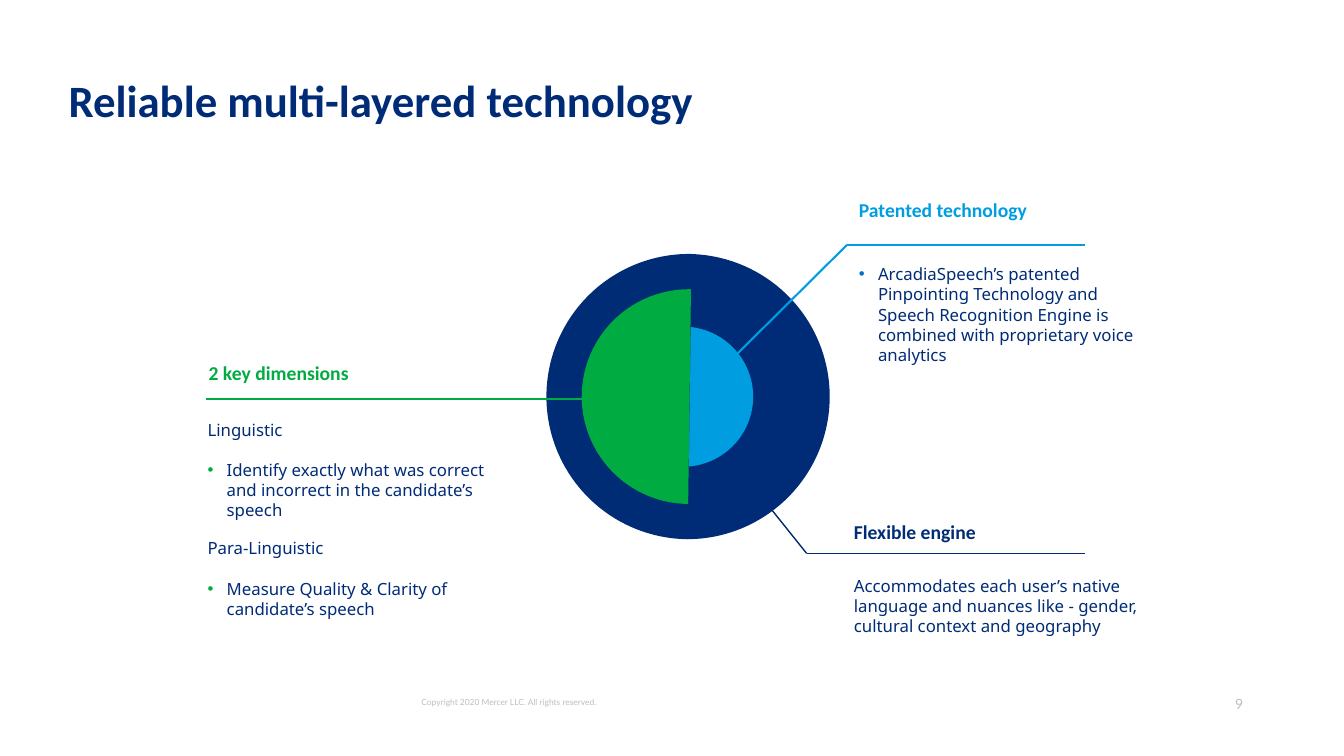
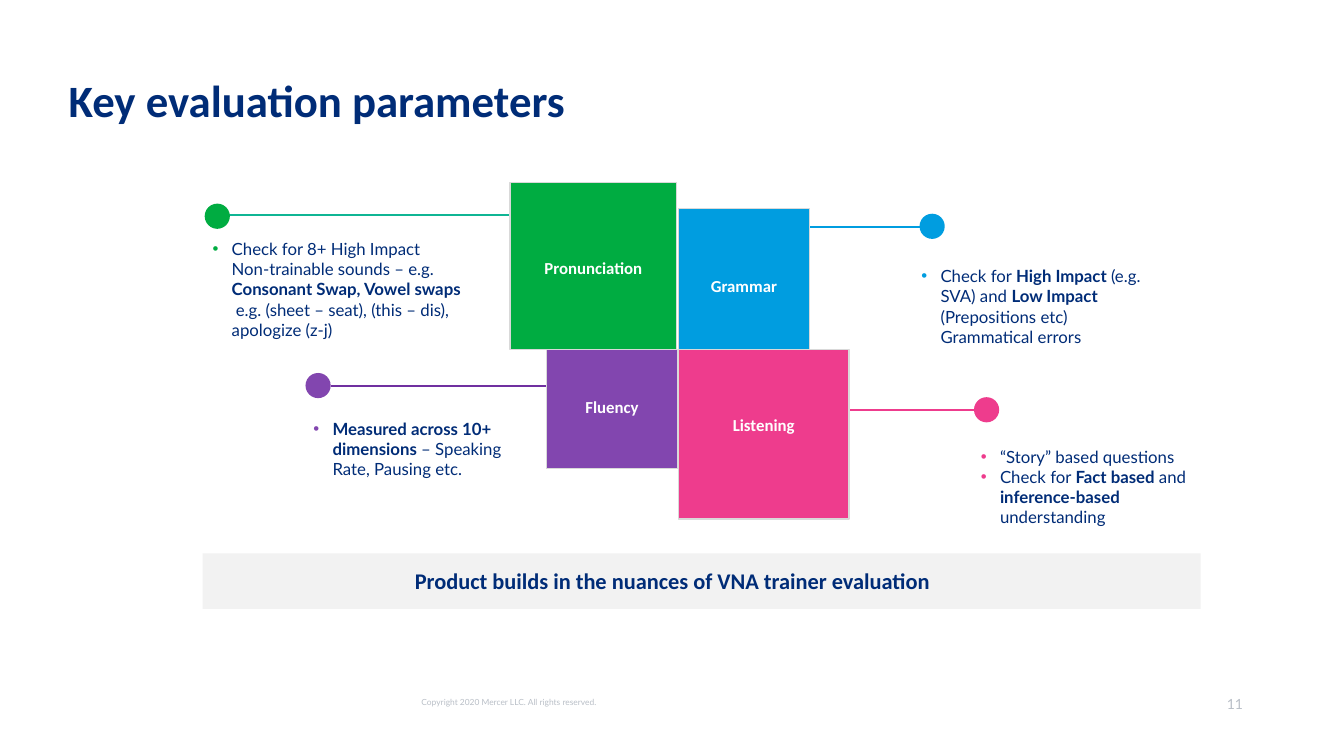
from collections import namedtuple
from dataclasses import dataclass

from lxml.etree import SubElement
from pptx import Presentation
from pptx.dml.color import RGBColor
from pptx.enum.shapes import MSO_CONNECTOR as Link, MSO_SHAPE as Shape
from pptx.enum.text import MSO_ANCHOR as Anchor, MSO_AUTO_SIZE as Fit, PP_ALIGN as Align
from pptx.oxml.ns import qn
from pptx.util import Emu, Pt

PX = 9144  # EMU per px, 100 px to the inch


@dataclass(frozen=True)
class Theme:
    navy: str = "002C77"
    disc: str = "002C75"
    green: str = "00AC41"
    teal: str = "0FB594"
    sky: str = "009DE0"
    blue: str = "0071CB"
    pink: str = "EE3C8D"
    purple: str = "8246AF"
    violet: str = "7030A0"
    band: str = "F2F2F2"
    edge: str = "D9D9D9"
    muted: str = "B9BFC7"
    white: str = "FFFFFF"
    head_font: str = "Calibri"
    body_font: str = "Lato"
    prose_font: str = "Noto Sans"
    title: int = 32
    banner: int = 16
    heading: int = 14
    body: int = 12
    page: int = 10
    footer: int = 6
    title_pitch: float = 36
    body_pitch: float = 14.4


T = Theme()
Style = namedtuple("Style", "font size color bold align pitch", defaults=(False, Align.LEFT, None))
TITLE = Style(T.head_font, T.title, T.navy, True, pitch=Pt(T.title_pitch))
BANNER = Style(T.head_font, T.banner, T.navy, True, Align.CENTER)
LABEL = Style(T.head_font, T.body, T.white, True, Align.CENTER)
PROSE = Style(T.prose_font, T.body, T.navy, pitch=Pt(T.body_pitch))
BODY = PROSE._replace(font=T.body_font)
PAGE = Style(T.body_font, T.page, T.muted, align=Align.RIGHT)
FOOTER = Style(T.body_font, T.footer, T.muted, pitch=0.9)


def heading_style(color):
    return Style(T.head_font, T.heading, color, True)


class Deck:
    """Holds the presentation and the slide being drawn."""

    def __init__(self, width, height):
        self.prs = Presentation()
        self.prs.slide_width, self.prs.slide_height = Emu(width * PX), Emu(height * PX)
        self.slide = None

    def new_slide(self, title, number):
        self.slide = self.prs.slides.add_slide(self.prs.slide_layouts[5])
        holder = self.slide.shapes.title
        holder.left, holder.top, holder.width, holder.height = self.emu(68, 75, 861, 106)
        self.fill_text(holder.text_frame, [title], TITLE, inset=False)
        self.text((1197, 690, 36, 17), [number], PAGE, inset=False)
        self.text((418, 693, 188, 14), ["Copyright 2020 Mercer LLC. All rights reserved."],
                  FOOTER, inset=False)

    @staticmethod
    def emu(*lengths):
        return [Emu(n * PX) for n in lengths]

    def shape(self, kind, box, fill, edge=None, angles=None):
        item = self.slide.shapes.add_shape(kind, *self.emu(*box))
        item.shadow.inherit = False
        item.fill.solid()
        item.fill.fore_color.rgb = RGBColor.from_string(fill)
        if edge:
            item.line.color.rgb = RGBColor.from_string(edge)
            item.line.width = Pt(1)
        else:
            item.line.fill.background()
        for i, degrees in enumerate(angles or ()):
            item.adjustments[i] = degrees * 0.6  # 60000ths of a degree over 100000

    def line(self, start, end, color, weight=1.5):
        item = self.slide.shapes.add_connector(Link.STRAIGHT, *self.emu(*start, *end))
        item.line.color.rgb = RGBColor.from_string(color)
        item.line.width = Pt(weight)
        SubElement(item._element.spPr, qn("a:effectLst"))

    def text(self, box, paragraphs, style, bullet=None, inset=True, plain=0, gap=0):
        frame = self.slide.shapes.add_textbox(*self.emu(*box)).text_frame
        self.fill_text(frame, paragraphs, style, bullet, inset, plain, gap)

    def fill_text(self, frame, paragraphs, style, bullet=None, inset=True, plain=0, gap=0):
        """A paragraph is a string, with ** around its bold parts.

        The first `plain` paragraphs get no bullet; `gap` is the space between paragraphs.
        """
        frame.word_wrap, frame.auto_size = True, Fit.NONE
        frame.vertical_anchor = Anchor.TOP
        frame.margin_left = frame.margin_right = Emu(10 * PX * inset)
        frame.margin_top = frame.margin_bottom = Emu(5 * PX * inset)
        for i, content in enumerate(paragraphs):
            par = frame.paragraphs[0] if i == 0 else frame.add_paragraph()
            if bullet and i >= plain:
                self.add_bullet(par, bullet)
            par.alignment = style.align
            if style.pitch:
                par.line_spacing = style.pitch
            if i and gap:
                par.space_before = Pt(gap)
            for j, part in enumerate(content.split("**")):
                self.add_runs(par, part, style, style.bold or j % 2 == 1)

    @staticmethod
    def add_bullet(par, color):
        props = par._p.get_or_add_pPr()
        props.set("marL", str(19 * PX))
        props.set("indent", str(-19 * PX))
        SubElement(SubElement(props, qn("a:buClr")), qn("a:srgbClr"), val=color)
        SubElement(props, qn("a:buFont"), typeface="Arial")
        SubElement(props, qn("a:buChar"), char="•")

    @staticmethod
    def add_runs(par, content, style, bold):
        for i, piece in enumerate(content.split("\n")):
            if i:
                par.add_line_break()
            if piece:
                run = par.add_run()
                run.text = piece
                run.font.name, run.font.size, run.font.bold = style.font, Pt(style.size), bold
                run.font.color.rgb = RGBColor.from_string(style.color)


def technology(deck):
    deck.new_slide("Reliable multi-layered technology", "9")

    # Half discs: left, top, diameter, colour, start and end angle
    right, left = (271, 90), (90.5, 271)
    for x, y, size, color, angles in (
        (540, 252, 283, T.navy, right),
        (608, 324, 139, T.sky, right),
        (542, 252, 283, T.disc, left),
        (577, 287, 213, T.green, left),
        (612, 324, 139, T.sky, (90, 95)),
    ):
        deck.shape(Shape.CHORD, (x, y, size, size), color, angles=angles)

    # Leader lines
    for points, color, weight in (
        ([(204, 396), (598, 396)], T.green, 1.75),
        ([(700, 382), (840, 243), (1076, 243)], T.sky, 1.5),
        ([(764, 504), (800, 549), (1076, 549)], T.disc, 1),
    ):
        for start, end in zip(points, points[1:]):
            deck.line(start, end, color, weight)

    # Headings
    for box, heading, color in (
        ((842, 191, 256, 34), "Patented technology", T.sky),
        ((837, 511, 353, 34), "Flexible engine", T.navy),
        ((197, 353, 332, 34), "2 key dimensions", T.green),
    ):
        deck.text(box, [heading], heading_style(color))

    # Explanations
    deck.text((842, 257, 293, 111),
              ["ArcadiaSpeech’s patented Pinpointing Technology and Speech Recognition Engine "
               "is combined with proprietary voice analytics"], PROSE, T.blue)
    deck.text((837, 566, 301, 91),
              ["Accommodates each user’s native language and nuances like - gender, "
               "cultural context and geography"], PROSE)
    for box, dimension, detail in (
        ((196, 411, 328, 111), "Linguistic",
         "Identify exactly what was correct and incorrect in the candidate’s speech"),
        ((196, 529, 315, 91), "Para-Linguistic",
         "Measure Quality & Clarity of candidate’s speech"),
    ):
        deck.text(box, [dimension, detail], PROSE, T.green, plain=1, gap=T.body_pitch)


Topic = namedtuple("Topic", "name color square label_top line_color line dot note_box notes")
TOPICS = (
    Topic("Pronunciation", T.green, (506, 181, 165, 166), 251, T.teal,
          (209, 542, 213), (203, 202), (201, 232, 273, 111),
          ["Check for 8+ High Impact\nNon-trainable sounds – e.g. **Consonant Swap, Vowel swaps\n "
           "**e.g. (sheet – seat), (this – dis), apologize (z-j)"]),
    Topic("Grammar", T.sky, (673, 207, 130, 140), 269, T.sky,
          (794, 922, 225), (912, 212), (904, 259, 260, 91),
          ["Check for **High Impact **(e.g. SVA) and **Low Impact **"
           "(Prepositions etc) Grammatical errors"]),
    Topic("Listening", T.pink, (673, 347, 169, 168), 407, T.pink,
          (838, 966, 407), (966, 394), (963, 438, 247, 91),
          ["“Story” based questions",
           "Check for **Fact based **and** inference-based **understanding"]),
    Topic("Fluency", T.purple, (542, 347, 130, 118), 389, T.violet,
          (328, 645, 383), (303, 370), (301, 410, 212, 71),
          ["**Measured across 10+ dimensions **– Speaking Rate, Pausing etc."]),
)


def parameters(deck):
    deck.new_slide("Key evaluation parameters", "11")

    # Leader lines lie behind the squares
    for topic in TOPICS:
        x1, x2, y = topic.line
        deck.line((x1, y), (x2, y), topic.line_color)

    # Closing band
    deck.shape(Shape.RECTANGLE, (201, 549, 990, 55), T.band)
    deck.text((187, 558, 960, 37),
              ["Product builds in the nuances of VNA trainer evaluation"], BANNER)

    # Squares with labels, notes and end dots
    for topic in TOPICS:
        x, _, width, _ = topic.square
        deck.shape(Shape.RECTANGLE, topic.square, topic.color, edge=T.edge)
        deck.text((x, topic.label_top, width, 30), [topic.name], LABEL)
        deck.text(topic.note_box, topic.notes, BODY, topic.color)
        deck.shape(Shape.OVAL, (*topic.dot, 25, 25), topic.color)


def main():
    deck = Deck(1333, 750)
    technology(deck)
    parameters(deck)
    deck.prs.save("out.pptx")


if __name__ == "__main__":
    main()
